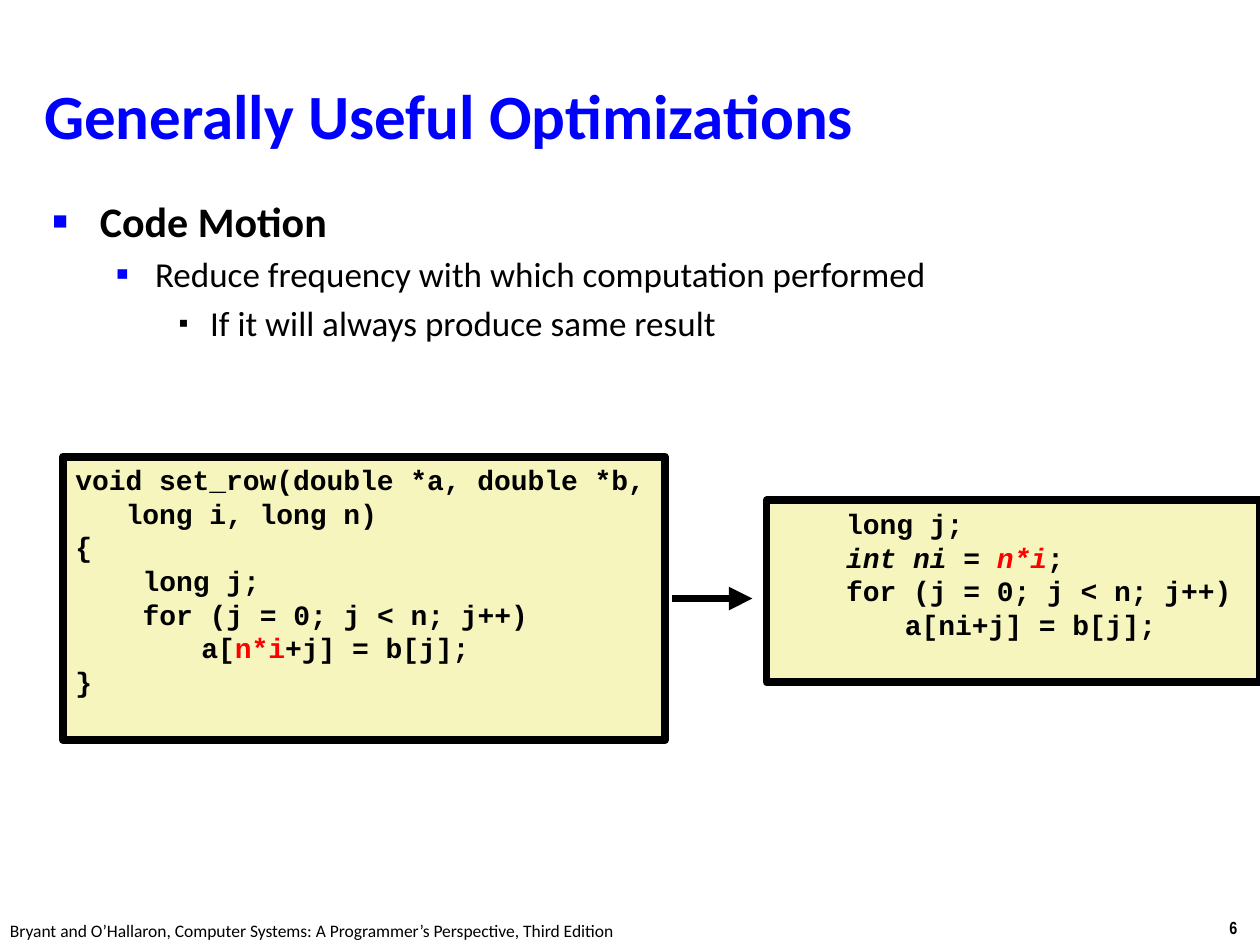
from lxml import etree
from pptx import Presentation
from pptx import util as u
from pptx.dml import color
from pptx.enum import shapes, text
from pptx.oxml import ns

BLACK, BLUE, RED, CREAM = "000000", "0000FF", "FF0000", "F6F5BD"
CODE_LINE = 19.2
SPACES = 9.6  # width of one code character
TAB = 72


def rgb(value):
    return color.RGBColor.from_string(value)


def add_xml(parent, tag, **attributes):
    return etree.SubElement(parent, ns.qn(tag), attributes)


class SlideBuilder:
    def __init__(self, presentation):
        self.slide = presentation.slides.add_slide(presentation.slide_layouts[5])
        self.heading = {"name": "Calibri", "size": u.Pt(36), "bold": True}
        self.body = {"name": "Calibri", "size": u.Pt(20), "bold": False}
        self.code_font = {"name": "Courier New", "size": u.Pt(16), "bold": True}

    def run(self, paragraph, wording, style, fill=BLACK):
        run = paragraph.add_run()
        run.text = wording
        for name, value in style.items():
            setattr(run.font, name, value)
        run.font.color.rgb = rgb(fill)

    def indent(self, paragraph, left, first=0):
        properties = paragraph._p.get_or_add_pPr()
        properties.set("marL", str(u.Pt(left)))
        properties.set("indent", str(u.Pt(first)))
        return properties

    def paragraphs(self, frame, count):
        return [frame.paragraphs[0]] + [frame.add_paragraph() for _ in range(count - 1)]

    def title(self, wording, box):
        shape = self.slide.shapes.title
        shape.left, shape.top, shape.width, shape.height = map(u.Pt, box)
        frame = shape.text_frame
        frame.vertical_anchor = text.MSO_ANCHOR.MIDDLE
        paragraph = frame.paragraphs[0]
        paragraph.alignment = text.PP_ALIGN.LEFT
        self.indent(paragraph, 9, -9)
        self.run(paragraph, wording, self.heading, BLUE)

    def label(self, wording, box, **changes):
        frame = self.slide.shapes.add_textbox(*map(u.Pt, box)).text_frame
        frame.word_wrap = False
        self.run(frame.paragraphs[0], wording, {**self.body, "size": u.Pt(10), **changes})

    def bullets(self, items, box):
        frame = self.slide.shapes.add_textbox(*map(u.Pt, box)).text_frame
        frame.word_wrap = True
        for level, (paragraph, item) in enumerate(zip(self.paragraphs(frame, len(items)), items)):
            wording, left, hang, symbol, fill, percent, changes = item
            style = {**self.body, **changes}
            paragraph.level = level
            paragraph.space_before = u.Pt(0.2 * style["size"].pt)
            properties = self.indent(paragraph, left, -hang)
            add_xml(add_xml(properties, "a:buClr"), "a:srgbClr", val=fill)
            add_xml(properties, "a:buSzPct", val=str(percent * 1000))
            add_xml(properties, "a:buFont", typeface="Arial")
            add_xml(properties, "a:buChar", char=symbol)
            self.run(paragraph, wording, style)

    def code(self, lines, box, wrap):
        shape = self.slide.shapes.add_shape(shapes.MSO_SHAPE.RECTANGLE, *map(u.Pt, box))
        shape.shadow.inherit = False
        shape.fill.solid()
        shape.fill.fore_color.rgb = rgb(CREAM)
        shape.line.color.rgb = rgb(BLACK)
        shape.line.width = u.Pt(4.5)
        frame = shape.text_frame
        frame.word_wrap = wrap
        frame.vertical_anchor = text.MSO_ANCHOR.TOP
        for paragraph, (left, *runs) in zip(self.paragraphs(frame, len(lines)), lines):
            paragraph.alignment = text.PP_ALIGN.LEFT
            paragraph.line_spacing = u.Pt(CODE_LINE)
            self.indent(paragraph, left)
            for wording, fill, italic in runs:
                self.run(paragraph, wording, {**self.code_font, "italic": italic}, fill)

    def arrow(self, start, end):
        connector = self.slide.shapes.add_connector(
            shapes.MSO_CONNECTOR.STRAIGHT, *map(u.Pt, start + end))
        connector.line.color.rgb = rgb(BLACK)
        connector.line.width = u.Pt(4.5)
        add_xml(connector.line._get_or_add_ln(), "a:tailEnd", type="triangle")
        add_xml(connector._element.spPr, "a:effectLst")


def plain(wording):
    return wording, BLACK, False


def main():
    presentation = Presentation()
    presentation.slide_width, presentation.slide_height = u.Pt(720), u.Pt(540)
    builder = SlideBuilder(presentation)

    # Page number and footer
    builder.label("6", (695.5, 520.5, 24.5, 19.4), name="Arial Narrow", bold=True)
    builder.label("Bryant and O’Hallaron, Computer Systems: A Programmer’s Perspective, "
                  "Third Edition", (-1.4, 522, 366, 19.4))

    # Title and bullets
    builder.title("Generally Useful Optimizations", (18, 23.8, 657.4, 83.5))
    builder.bullets([
        ("Code Motion", 27, 27, "■", BLUE, 60, {"size": u.Pt(24), "bold": True}),
        ("Reduce frequency with which computation performed", 58.5, 22.5, "▪", BLUE, 110, {}),
        ("If it will always produce same result", 90, 18, "▪", BLACK, 80, {}),
    ], (23, 108, 654.5, 119.5))

    # Improved code, arrow, first code
    declaration = (4 * SPACES, plain("long j;"))
    loop = (4 * SPACES, plain("for (j = 0; j < n; j++)"))
    builder.code([
        declaration,
        (4 * SPACES, ("int ni = ", BLACK, True), ("n*i", RED, True), plain(";")),
        loop,
        (TAB, plain("a[ni+j] = b[j];")),
    ], (438, 286, 282, 103.7), True)
    builder.arrow((384, 342), (430, 342))
    builder.code([
        (0, plain("void set_row(double *a, double *b,")),
        (3 * SPACES, plain("long i, long n)")),
        (0, plain("{")),
        declaration,
        loop,
        (TAB, plain("a["), ("n*i", RED, False), plain("+j] = b[j];")),
        (0, plain("}")),
    ], (36, 260.9, 344, 162), False)

    presentation.save("out.pptx")


if __name__ == "__main__":
    main()
